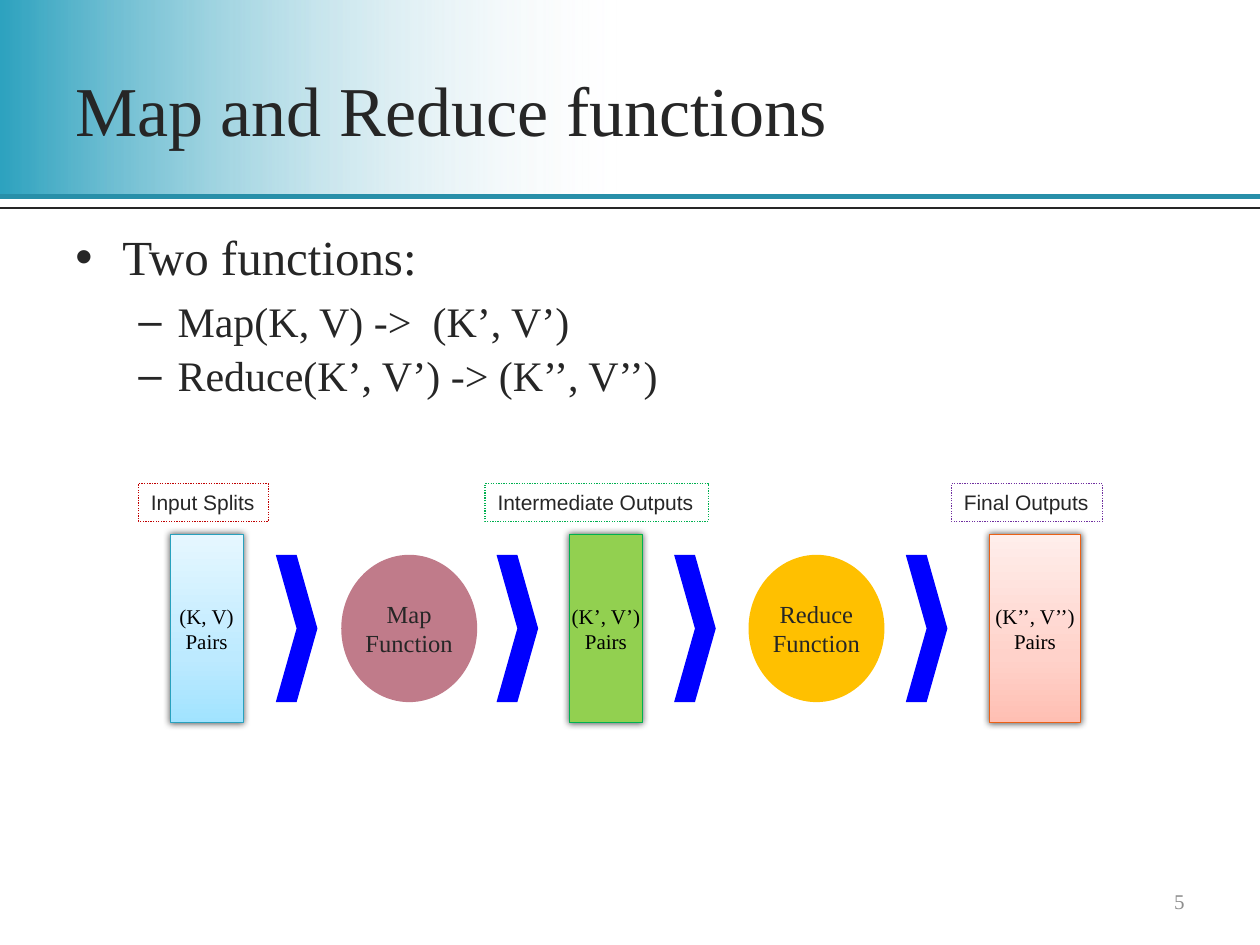
from dataclasses import dataclass

from lxml import etree
from pptx import Presentation
from pptx.dml.color import RGBColor
from pptx.enum.dml import MSO_LINE
from pptx.enum.shapes import MSO_CONNECTOR, MSO_SHAPE
from pptx.enum.text import MSO_ANCHOR, MSO_AUTO_SIZE, PP_ALIGN
from pptx.oxml.ns import qn
from pptx.util import Cm, Pt

RECT, OVAL, CHEVRON = MSO_SHAPE.RECTANGLE, MSO_SHAPE.OVAL, MSO_SHAPE.CHEVRON
LEFT, CENTER, RIGHT = PP_ALIGN.LEFT, PP_ALIGN.CENTER, PP_ALIGN.RIGHT
MIDDLE, TOP = MSO_ANCHOR.MIDDLE, MSO_ANCHOR.TOP
STRAIGHT = MSO_CONNECTOR.STRAIGHT
DOTTED = MSO_LINE.ROUND_DOT
NO_AUTOSIZE, GROW = MSO_AUTO_SIZE.NONE, MSO_AUTO_SIZE.SHAPE_TO_FIT_TEXT

SERIF, SANS = "Times New Roman", "Arial"
COLORS = {
    "ink": "262626", "black": "000000", "page": "8E8E8E",
    "teal": "2DA2BF", "mist": "E8F0F4", "rule": "288FA9",
    "arrow": "0000FF", "map": "C07B8A", "reduce": "FFC000",
    "input_line": "28A1BE", "middle": "92D050", "green": "00B050",
    "output_line": "EB6015", "red": "C00000", "purple": "7030A0",
    "input_low": "A1E3FF", "input_mid": "BDEAFF", "input_high": "E6F7FF",
    "output_low": "FFBFB3", "output_mid": "FFD2CA", "output_high": "FFEEEB",
}
SLIDE_WIDTH, SLIDE_HEIGHT = 25.4, 19.05
FLOW_AXIS = 12.67  # centre line of the flow diagram
BAR_HEIGHT, STEP_HEIGHT = 3.81, 2.97
LABEL_TOP, LABEL_HEIGHT = 9.75, 0.76


@dataclass
class Stop:
    position: int
    color: str
    opacity: int = 100


@dataclass
class Pairs:
    text: str
    left: float
    width: float
    fill: str | list[Stop]
    line: str


@dataclass
class Function:
    text: str
    left: float
    fill: str


@dataclass
class Label:
    text: str
    left: float
    width: float
    line: str


@dataclass
class Bullet:
    text: str
    mark: str
    size: int
    margin: float
    hanging: float
    level: int = 0
    before: float = 0
    after: float = 0
    spacing: float = 1.0


PAIRS = [
    Pairs("(K, V) Pairs", 3.43, 1.47,
          [Stop(0, "input_low"), Stop(35, "input_mid"), Stop(100, "input_high")],
          "input_line"),
    Pairs("(K’, V’) Pairs", 11.48, 1.47, "middle", "green"),
    Pairs("(K’’, V’’) Pairs", 19.94, 1.85,
          [Stop(0, "output_low"), Stop(35, "output_mid"), Stop(100, "output_high")],
          "output_line"),
]
FUNCTIONS = [Function("Map Function", 6.88, "map"),
             Function("Reduce Function", 15.09, "reduce")]
CHEVRON_LEFTS = [5.56, 10.01, 13.59, 18.26]
LABELS = [Label("Input Splits", 2.79, 2.62, "red"),
          Label("Intermediate Outputs", 9.78, 4.5, "green"),
          Label("Final Outputs", 19.18, 3.05, "purple")]
BULLETS = [
    Bullet("Two functions:", "•", 28, 0.95, 0.95, after=4),
    Bullet("Map(K, V) ->  (K’, V’)", "–", 24, 2.06, 0.79, 1, 4.8, 0, 0.9),
    Bullet("Reduce(K’, V’) -> (K’’, V’’)", "–", 24, 2.06, 0.79, 1, 4.8, 0, 0.9),
]


def rgb(name: str) -> RGBColor:
    return RGBColor.from_string(COLORS[name])


def add_color(parent, name: str, opacity: int) -> None:
    color = etree.SubElement(parent, qn("a:srgbClr"), val=COLORS[name])
    if opacity < 100:
        etree.SubElement(color, qn("a:alpha"), val=str(opacity * 1000))


def set_gradient(shape, stops: list[Stop], angle: int) -> None:
    shape.fill.background()
    no_fill = shape._element.spPr.find(qn("a:noFill"))
    gradient = etree.Element(qn("a:gradFill"), rotWithShape="1")
    stop_list = etree.SubElement(gradient, qn("a:gsLst"))
    for stop in stops:
        entry = etree.SubElement(stop_list, qn("a:gs"), pos=str(stop.position * 1000))
        add_color(entry, stop.color, stop.opacity)
    etree.SubElement(gradient, qn("a:lin"), ang=str(angle * 60000), scaled="0")
    no_fill.getparent().replace(no_fill, gradient)


def add_glow_shadow(shape) -> None:
    effects = shape._element.spPr.find(qn("a:effectLst"))
    shadow = etree.SubElement(effects, qn("a:outerShdw"), blurRad=str(Pt(4)),
                              dist="0", dir="0", rotWithShape="0")
    add_color(shadow, "black", 64)


def add_block(slide, kind, left: float, top: float, width: float, height: float,
              fill: str | list[Stop] | None = None, line: str | None = None,
              line_width: float = 0.5, angle: int = 270):
    shape = slide.shapes.add_shape(kind, Cm(left), Cm(top), Cm(width), Cm(height))
    shape.shadow.inherit = False
    if fill is None:
        shape.fill.background()
    elif isinstance(fill, str):
        shape.fill.solid()
        shape.fill.fore_color.rgb = rgb(fill)
    else:
        set_gradient(shape, fill, angle)
    if line is None:
        shape.line.fill.background()
    else:
        shape.line.color.rgb = rgb(line)
        shape.line.width = Pt(line_width)
    return shape


def style(paragraph, size: float, color: str, font: str = SERIF, align=LEFT) -> None:
    paragraph.alignment = align
    paragraph.font.size = Pt(size)
    paragraph.font.name = font
    paragraph.font.color.rgb = rgb(color)


def write(shape, text: str, size: float, color: str, font: str = SERIF,
          align=LEFT, anchor=MIDDLE, wrap: bool = True, autosize=NO_AUTOSIZE) -> None:
    frame = shape.text_frame
    frame.text = text
    frame.word_wrap, frame.auto_size = wrap, autosize
    frame.vertical_anchor = anchor
    style(frame.paragraphs[0], size, color, font, align)


def write_in_step(shape, text: str, size: float, color: str) -> None:
    write(shape, text, size, color, align=CENTER)
    shape.text_frame.margin_left = shape.text_frame.margin_right = 0


def add_textbox(slide, left: float, top: float, width: float, height: float):
    return slide.shapes.add_textbox(Cm(left), Cm(top), Cm(width), Cm(height))


def add_rule(slide, y: float, color: str, width: float) -> None:
    rule = slide.shapes.add_connector(STRAIGHT, 0, Cm(y), Cm(SLIDE_WIDTH), Cm(y))
    rule.line.color.rgb = rgb(color)
    rule.line.width = Pt(width)
    etree.SubElement(rule._element.spPr, qn("a:effectLst"))


def add_bullets(slide) -> None:
    frame = add_textbox(slide, 1.27, 4.45, 22.86, 12.57).text_frame
    frame.word_wrap = True
    for index, bullet in enumerate(BULLETS):
        paragraph = frame.add_paragraph() if index else frame.paragraphs[0]
        paragraph.text, paragraph.level = bullet.text, bullet.level
        paragraph.space_before, paragraph.space_after = Pt(bullet.before), Pt(bullet.after)
        paragraph.line_spacing = bullet.spacing
        properties = paragraph._p.get_or_add_pPr()
        properties.set("marL", str(Cm(bullet.margin)))
        properties.set("indent", str(-Cm(bullet.hanging)))
        etree.SubElement(properties, qn("a:buFont"), typeface=SANS)
        etree.SubElement(properties, qn("a:buChar"), char=bullet.mark)
        style(paragraph, bullet.size, "ink")


def add_flow(slide) -> None:
    bar_top, step_top = FLOW_AXIS - BAR_HEIGHT / 2, FLOW_AXIS - STEP_HEIGHT / 2
    for pairs in PAIRS:
        bar = add_block(slide, RECT, pairs.left, bar_top, pairs.width, BAR_HEIGHT,
                        pairs.fill, pairs.line)
        add_glow_shadow(bar)
        write_in_step(bar, pairs.text, 12, "black")
    for left in CHEVRON_LEFTS:
        add_block(slide, CHEVRON, left, step_top, 0.84, STEP_HEIGHT, "arrow")
    for function in FUNCTIONS:
        circle = add_block(slide, OVAL, function.left, step_top, 2.74, STEP_HEIGHT,
                           function.fill)
        write_in_step(circle, function.text, 14, "ink")
    for label in LABELS:
        tag = add_block(slide, RECT, label.left, LABEL_TOP, label.width, LABEL_HEIGHT,
                        line=label.line, line_width=0.75)
        tag.line.dash_style = DOTTED
        write(tag, label.text, 12, "ink", SANS, anchor=TOP, wrap=False, autosize=GROW)


def main() -> None:
    deck = Presentation()
    deck.slide_width, deck.slide_height = Cm(SLIDE_WIDTH), Cm(SLIDE_HEIGHT)
    slide = deck.slides.add_slide(deck.slide_layouts[6])
    # Header band and rules
    add_block(slide, RECT, 0, 0, SLIDE_WIDTH, 4.01,
              [Stop(0, "teal"), Stop(49, "mist", 0)], angle=0)
    add_rule(slide, 3.96, "rule", 3)
    add_rule(slide, 4.19, "ink", 1.25)
    # Body, page number and title
    add_bullets(slide)
    write(add_textbox(slide, 18.21, 17.65, 5.92, 1.02), "5", 12, "page", align=RIGHT)
    write(add_textbox(slide, 1.27, 0.43, 22.86, 3.51), "Map and Reduce functions", 40, "ink")
    # Flow diagram
    add_flow(slide)
    deck.save("out.pptx")


if __name__ == "__main__":
    main()
